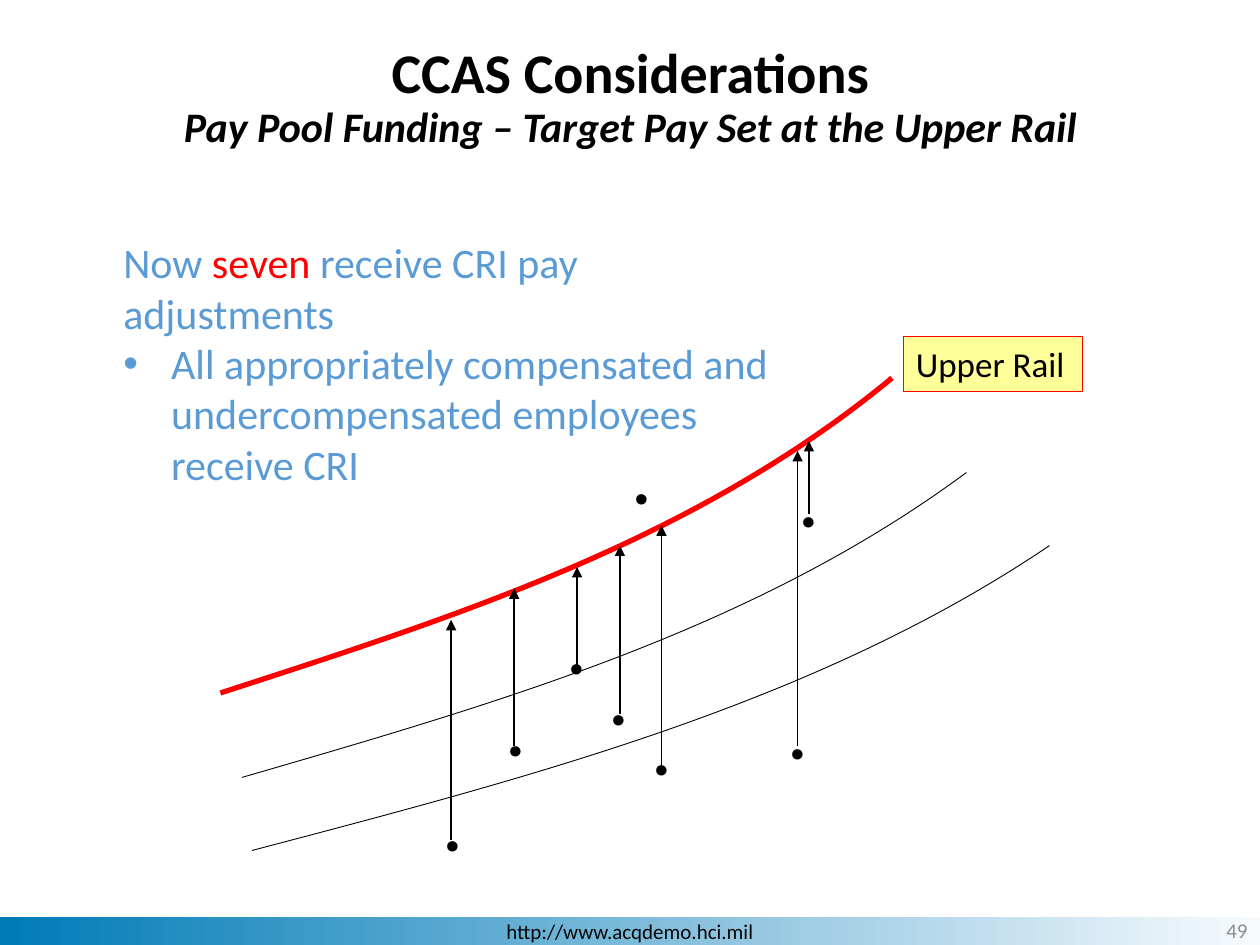
from lxml.etree import SubElement
from pptx import Presentation
from pptx.dml.color import RGBColor
from pptx.enum.shapes import MSO_CONNECTOR, MSO_SHAPE
from pptx.enum.text import MSO_ANCHOR, MSO_AUTO_SIZE, PP_ALIGN
from pptx.oxml.ns import qn
from pptx.util import Inches, Pt

BLACK, RED, BLUE = "000000", "FF0000", "5B9BD5"


def color(hex_value):
    return RGBColor.from_string(hex_value)


def set_values(target, values):
    for name, value in values.items():
        setattr(target, name, value)


def add_span(para, text, size, hex_value, **style):
    span = para.add_run()
    span.text = text
    set_values(span.font, {"name": "Calibri", "size": Pt(size), **style})
    span.font.color.rgb = color(hex_value)


def add_box(page, left, top, width, height, **frame_format):
    box = page.shapes.add_textbox(*map(Inches, (left, top, width, height)))
    set_values(box.text_frame, {"word_wrap": True, **frame_format})
    return box.text_frame


def add_rectangle(page, left, top, width, height):
    box = page.shapes.add_shape(
        MSO_SHAPE.RECTANGLE, *map(Inches, (left, top, width, height)))
    box.shadow.inherit = False
    return box


def add_bullet(para, indent):
    properties = para._p.get_or_add_pPr()
    properties.set("marL", str(Inches(indent)))
    properties.set("indent", str(-Inches(indent)))
    SubElement(properties, qn("a:buFont"), typeface="Arial")
    SubElement(properties, qn("a:buChar"), char="•")


def add_curve(page, points, hex_value, width):
    start, *rest = [(Inches(x), Inches(y)) for x, y in points]
    builder = page.shapes.build_freeform(*start)
    builder.add_line_segments(rest, close=False)
    curve = builder.convert_to_shape()
    curve.shadow.inherit = False
    curve.fill.background()
    curve.line.color.rgb = color(hex_value)
    curve.line.width = Pt(width)
    outline = next(curve._element.iter(qn("a:path")))
    bezier = SubElement(outline, qn("a:cubicBezTo"))
    for segment in outline.findall(qn("a:lnTo")):
        bezier.append(segment[0])
        outline.remove(segment)


def add_dot(page, left, top, width=0.34, wrap=False):
    frame = add_box(page, left, top, width, 0.77, word_wrap=wrap,
                    auto_size=MSO_AUTO_SIZE.SHAPE_TO_FIT_TEXT)
    add_span(frame.paragraphs[0], ".", 40, BLACK, bold=True)


def add_arrow(page, x, bottom, top):
    arrow = page.shapes.add_connector(
        MSO_CONNECTOR.STRAIGHT, *map(Inches, (x, bottom, x, top)))
    arrow.line.color.rgb = color(BLACK)
    arrow.line.width = Pt(0.75)
    SubElement(arrow.line._get_or_add_ln(), qn("a:tailEnd"), type="triangle")
    SubElement(arrow._element.spPr, qn("a:effectLst"))


def add_footer(page):
    bar = add_rectangle(page, 0, 7.28, 10, 0.22)
    bar.line.fill.background()
    bar.fill.gradient()
    bar.fill.gradient_angle = 180
    for stop, hex_value in zip(bar.fill.gradient_stops, ("F7FAFD", "007BB7")):
        stop.color.rgb = color(hex_value)
    bar.text_frame.vertical_anchor = MSO_ANCHOR.MIDDLE
    para = bar.text_frame.paragraphs[0]
    para.alignment = PP_ALIGN.CENTER
    add_span(para, "http://www.acqdemo.hci.mil", 12, "060606")


def add_page_number(page):
    frame = add_box(page, 7.75, 7.18, 2.25, 0.4,
                    vertical_anchor=MSO_ANCHOR.MIDDLE)
    para = frame.paragraphs[0]
    para.alignment = PP_ALIGN.RIGHT
    add_span(para, "49", 12, "8C8C8C")


def add_rail_label(page):
    label = add_rectangle(page, 7.17, 2.67, 1.42, 0.44)
    label.fill.solid()
    label.fill.fore_color.rgb = color("FFFF99")
    label.line.color.rgb = color(RED)
    label.line.width = Pt(0.75)
    set_values(label.text_frame, {
        "word_wrap": False,
        "auto_size": MSO_AUTO_SIZE.SHAPE_TO_FIT_TEXT,
        "vertical_anchor": MSO_ANCHOR.TOP,
    })
    para = label.text_frame.paragraphs[0]
    para.alignment = PP_ALIGN.LEFT
    add_span(para, "Upper Rail", 20, BLACK)


def add_message(page):
    frame = add_box(page, 0.88, 1.83, 5.45, 2.12,
                    auto_size=MSO_AUTO_SIZE.SHAPE_TO_FIT_TEXT)
    para = frame.paragraphs[0]
    for text, hex_value in (("Now ", BLUE), ("seven", RED),
                            (" receive CRI pay adjustments", BLUE)):
        add_span(para, text, 24, hex_value)
    bullet = frame.add_paragraph()
    add_bullet(bullet, 0.38)
    add_span(bullet, "All appropriately compensated and undercompensated "
             "employees receive CRI", 24, BLUE)


def add_title(page):
    para = add_box(page, 0, 0.31, 10.01, 0.89).paragraphs[0]
    set_values(para, {"alignment": PP_ALIGN.CENTER, "line_spacing": 0.9})
    add_span(para, "CCAS Considerations", 32, BLACK, bold=True)
    para.add_line_break()
    add_span(para, "Pay Pool Funding – Target Pay Set at the Upper Rail", 24,
             BLACK, bold=True, italic=True)


def main():
    deck = Presentation()
    set_values(deck, {"slide_width": Inches(10), "slide_height": Inches(7.5)})
    page = deck.slides.add_slide(deck.slide_layouts[6])

    add_footer(page)
    add_rail_label(page)

    rails = [
        ([(2, 6.75), (4.24, 6.16), (6.48, 5.58), (8.33, 4.33)], BLACK, 0.5),
        ([(1.75, 5.5), (3.63, 4.89), (5.52, 4.29), (7.08, 3)], RED, 3),
        ([(1.92, 6.17), (3.95, 5.58), (5.98, 5), (7.67, 3.75)], BLACK, 0.5),
    ]
    for rail in rails:
        add_curve(page, *rail)

    employees = [(3.92, 5.4), (3.42, 6.15), (4.41, 4.75), (4.74, 5.15),
                 (5.08, 5.55), (6.16, 5.42), (6.25, 3.58)]
    for left, top in employees:
        add_dot(page, left, top)
    add_dot(page, 4.92, 3.4, width=0.5, wrap=True)

    raises = [(3.58, 6.67, 4.92), (5.25, 6.08, 4.17), (6.33, 5.92, 3.58),
              (4.08, 5.92, 4.67), (4.92, 5.67, 4.33), (6.42, 4.08, 3.5),
              (4.58, 5.33, 4.5)]
    for x, bottom, top in raises:
        add_arrow(page, x, bottom, top)

    add_message(page)
    add_page_number(page)
    add_title(page)
    deck.save("out.pptx")


if __name__ == "__main__":
    main()
